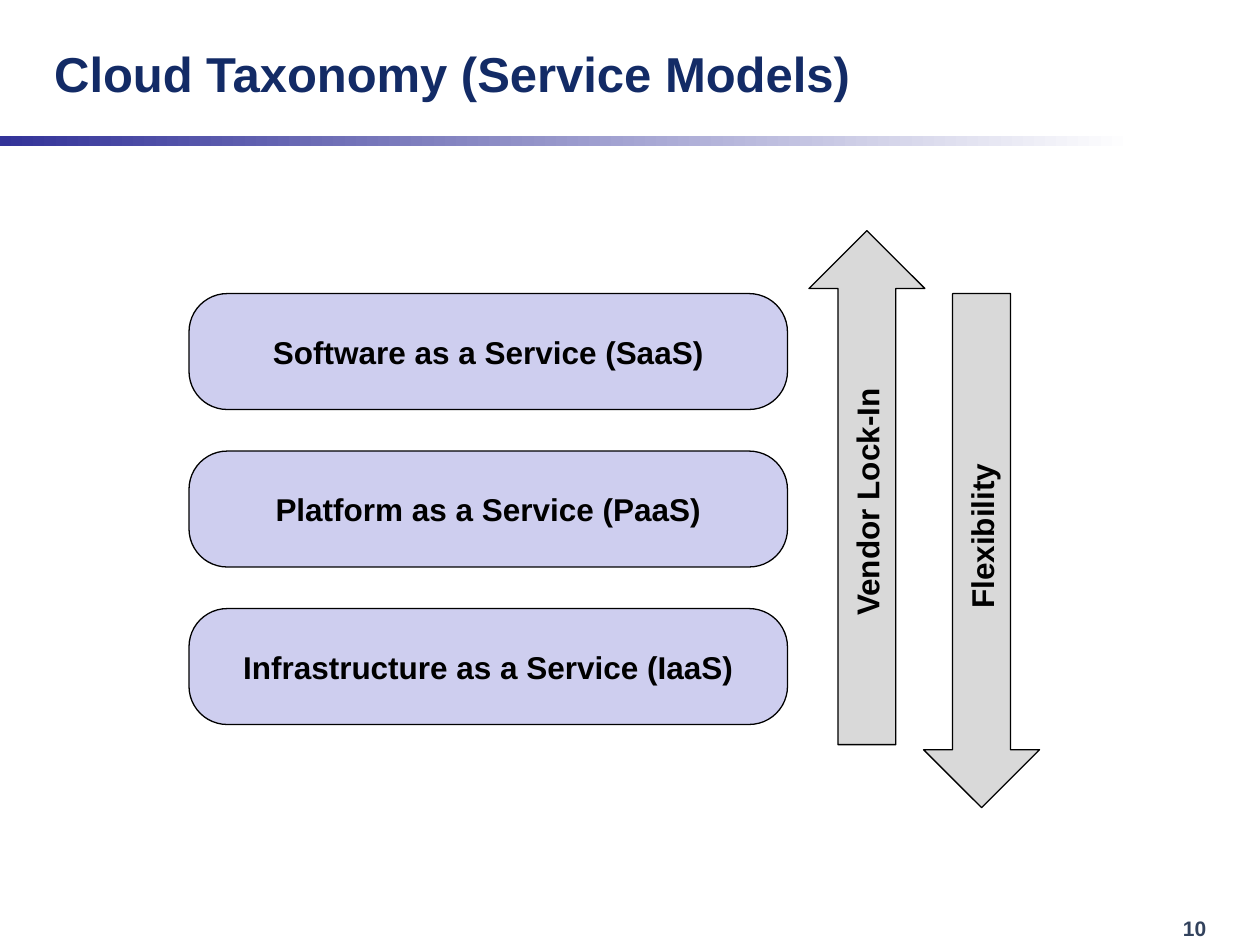
"""Build the cloud service models slide."""
from pptx import Presentation
from pptx.dml.color import RGBColor
from pptx.enum.shapes import MSO_SHAPE as SHAPE
from pptx.enum.text import MSO_ANCHOR as ANCHOR, PP_ALIGN as ALIGN
from pptx.util import Inches, Pt

TITLE = "Cloud Taxonomy (Service Models)"
PAGE = "10"
MODELS = [
    "Software as a Service (SaaS)",
    "Platform as a Service (PaaS)",
    "Infrastructure as a Service (IaaS)",
]
ARROWS = [
    {"text": "Vendor Lock-In", "left": 6.42, "top": 1.83, "rotation": 0, "vert": "vert270"},
    {"text": "Flexibility", "left": 7.33, "top": 2.33, "rotation": 180, "vert": "vert"},
]
COLORS = {
    "title": "132B66", "page": "32425D", "bar": "333399", "white": "FFFFFF",
    "model": "CECEEF", "arrow": "D9D9D9", "black": "000000",
}
MODEL_LEFT, MODEL_TOP, MODEL_STEP = 1.5, 2.33, 1.25
MODEL_WIDTH, THICKNESS, ARROW_HEIGHT = 4.75, 0.92, 4.08


def rgb(name):
    return RGBColor.from_string(COLORS[name])


def write(shape, text, size, color, align, anchor=ANCHOR.MIDDLE, wrap=False):
    tf = shape.text_frame
    tf.text = text
    tf.word_wrap, tf.vertical_anchor = wrap, anchor
    p = tf.paragraphs[0]
    p.alignment = align
    font = p.runs[0].font
    for name, value in {"name": "Arial", "size": Pt(size), "bold": True}.items():
        setattr(font, name, value)
    font.color.rgb = rgb(color)


def add_block(s, kind, box, fill, text):
    sp = s.shapes.add_shape(kind, *map(Inches, box))
    sp.shadow.inherit = False
    sp.fill.solid()
    sp.fill.fore_color.rgb = rgb(fill)
    sp.line.color.rgb = rgb("black")
    sp.line.width = Pt(0.75)
    write(sp, text, 18, "black", ALIGN.CENTER)
    return sp


def add_bar(s):
    bar = s.shapes.add_shape(SHAPE.RECTANGLE, *map(Inches, (0, 1.08, 10, 0.08)))
    bar.shadow.inherit = False
    bar.line.fill.background()
    bar.fill.gradient()
    bar.fill.gradient_angle = 0
    for stop, (position, color) in zip(bar.fill.gradient_stops, [(0, "bar"), (0.9, "white")]):
        stop.position = position
        stop.color.rgb = rgb(color)


def main():
    prs = Presentation()
    prs.slide_width, prs.slide_height = Inches(10), Inches(7.5)
    s = prs.slides.add_slide(prs.slide_layouts[5])

    title = s.shapes.title
    title.left, title.top, title.width, title.height = map(Inches, (0.33, 0.08, 7.08, 1))
    write(title, TITLE, 28, "title", ALIGN.LEFT, wrap=True)

    add_bar(s)
    page = s.shapes.add_textbox(*map(Inches, (9.29, 7.22, 0.64, 0.3)))
    write(page, PAGE, 12, "page", ALIGN.LEFT, ANCHOR.TOP, True)

    for i, text in enumerate(MODELS):
        box = (MODEL_LEFT, MODEL_TOP + i * MODEL_STEP, MODEL_WIDTH, THICKNESS)
        sp = add_block(s, SHAPE.ROUNDED_RECTANGLE, box, "model", text)
        sp.adjustments[0] = 0.33

    for arrow in ARROWS:
        box = (arrow["left"], arrow["top"], THICKNESS, ARROW_HEIGHT)
        sp = add_block(s, SHAPE.UP_ARROW, box, "arrow", arrow["text"])
        sp.rotation = arrow["rotation"]
        sp.text_frame._txBody.bodyPr.set("vert", arrow["vert"])

    prs.save("out.pptx")


if __name__ == "__main__":
    main()
